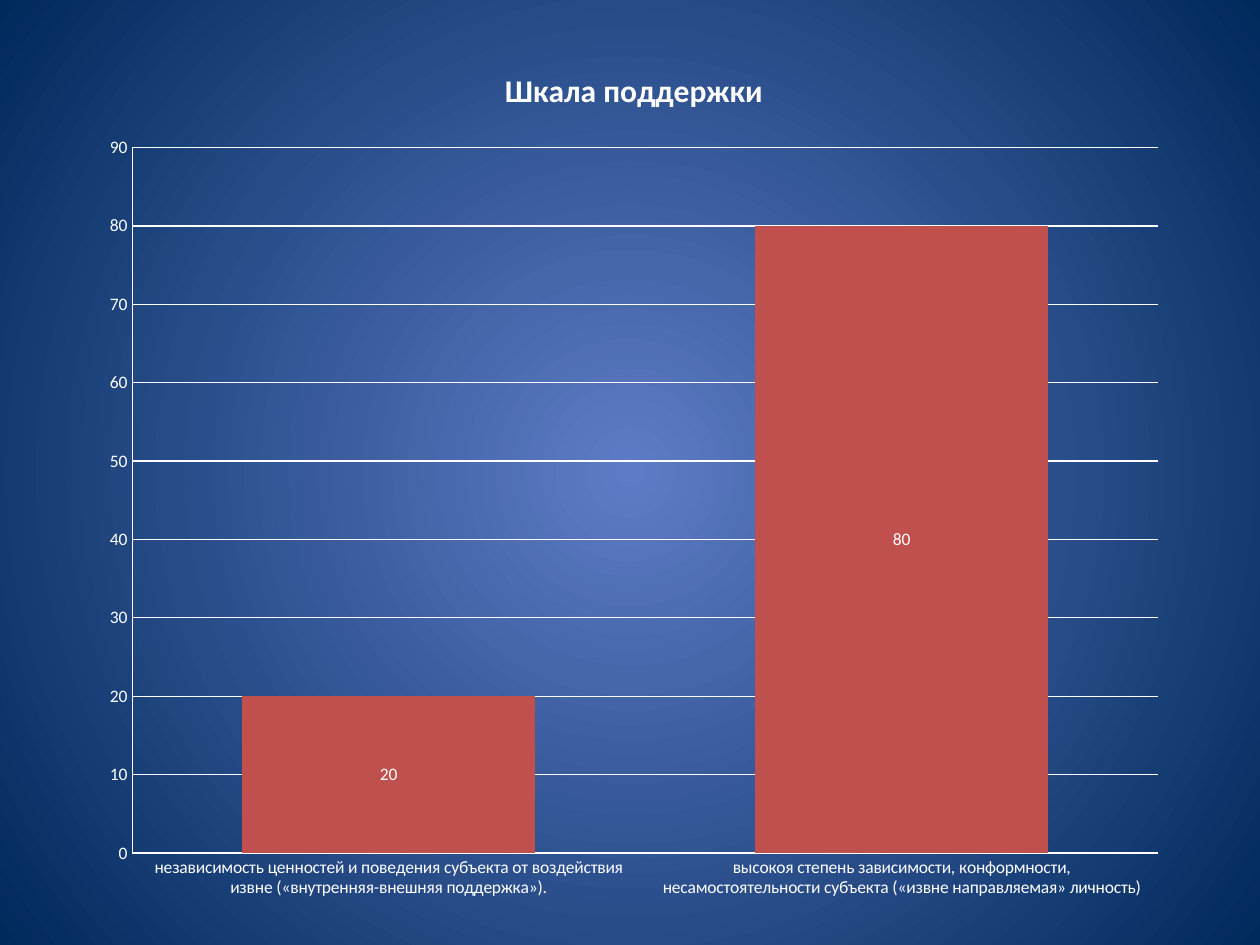
from dataclasses import dataclass

from lxml import etree
from pptx import Presentation, util as u
from pptx.chart import data
from pptx.dml import color
from pptx.enum import chart as kinds
from pptx.oxml import ns

PX = u.Inches(1) / 126


def px(length):
    return u.Emu(round(length * PX))


@dataclass(frozen=True)
class Theme:
    center: str = "5E7CC5"
    edge: str = "00295C"
    ink: str = "FFFFFF"
    bar: str = "C0504D"
    font: str = "Calibri"
    body: int = 10
    heading: int = 18


class Deck:
    """Draws styled elements on the current slide."""

    def __init__(self, theme):
        self.theme = theme
        self.presentation = Presentation()
        self.presentation.slide_width = px(1260)
        self.presentation.slide_height = px(945)
        self.slide = None

    def add_slide(self):
        self.slide = self.presentation.slides.add_slide(self.presentation.slide_layouts[6])

    def radial_background(self):
        fill = self.slide.background.fill
        fill.gradient()
        for stop, shade in zip(fill.gradient_stops, (self.theme.center, self.theme.edge)):
            stop.color.rgb = color.RGBColor.from_string(shade)
        gradient = self.slide.element.find(".//" + ns.qn("a:gradFill"))
        gradient.remove(gradient.find(ns.qn("a:lin")))
        circle = etree.SubElement(gradient, ns.qn("a:path"), path="circle")
        etree.SubElement(circle, ns.qn("a:fillToRect"),
                         {side: "50000" for side in "ltrb"})

    def style_font(self, font, size, bold=False):
        font.name = self.theme.font
        font.size = u.Pt(size)
        font.bold = bold
        font.color.rgb = color.RGBColor.from_string(self.theme.ink)

    def style_line(self, line):
        line.color.rgb = color.RGBColor.from_string(self.theme.ink)
        line.width = u.Pt(0.75)

    def column_chart(self, heading, shares, left, top, width, height):
        chart_data = data.CategoryChartData()
        chart_data.categories = list(shares)
        chart_data.add_series("Series 1", list(shares.values()))
        scale = self.slide.shapes.add_chart(
            kinds.XL_CHART_TYPE.COLUMN_STACKED,
            px(left), px(top), px(width), px(height), chart_data).chart
        self.style_font(scale.font, self.theme.body)
        scale.has_legend = False
        scale.has_title = True
        title = scale.chart_title.text_frame
        title.text = heading
        self.style_font(title.paragraphs[0].font, self.theme.heading, bold=True)

        columns = scale.plots[0]
        columns.vary_by_categories = False
        columns.gap_width = 75
        columns.overlap = 100
        bars = columns.series[0]
        bars.format.fill.solid()
        bars.format.fill.fore_color.rgb = color.RGBColor.from_string(self.theme.bar)
        labels = bars.data_labels
        labels.show_value = True
        labels.position = kinds.XL_LABEL_POSITION.CENTER
        self.style_font(labels.font, self.theme.body)

        for axis in (scale.category_axis, scale.value_axis):
            axis.major_tick_mark = kinds.XL_TICK_MARK.NONE
            axis.minor_tick_mark = kinds.XL_TICK_MARK.NONE
            self.style_line(axis.format.line)
        values = scale.value_axis
        values.minimum_scale, values.maximum_scale, values.major_unit = 0, 90, 10
        values.has_major_gridlines = True
        self.style_line(values.major_gridlines.format.line)

    def save(self):
        self.presentation.save("out.pptx")


def main():
    shares = {
        "независимость ценностей и поведения субъекта от воздействия извне "
        "(«внутренняя-внешняя поддержка»).": 20,
        "высокоя степень зависимости, конформности, несамостоятельности субъекта "
        "(«извне направляемая» личность)": 80,
    }
    deck = Deck(Theme())
    deck.add_slide()
    deck.radial_background()
    deck.column_chart("Шкала поддержки", shares, 88, 39, 1092, 876)
    deck.save()


if __name__ == "__main__":
    main()
